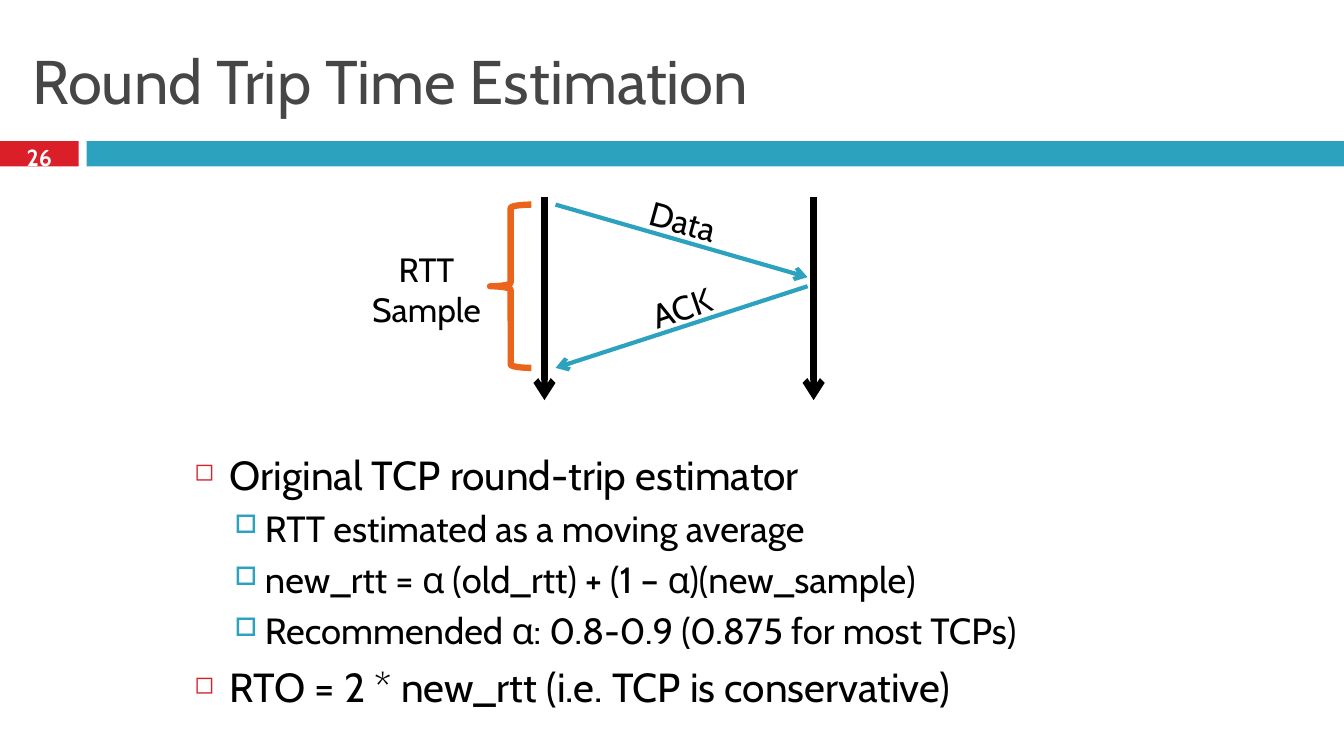
from dataclasses import dataclass

from lxml import etree
from pptx import Presentation
from pptx.dml.color import RGBColor
from pptx.enum.shapes import MSO_CONNECTOR, MSO_SHAPE
from pptx.enum.text import MSO_ANCHOR, PP_ALIGN
from pptx.oxml.ns import qn
from pptx.util import Pt

RECT = MSO_SHAPE.RECTANGLE
BRACE = MSO_SHAPE.LEFT_BRACE
LINE = MSO_CONNECTOR.STRAIGHT
LEFT = PP_ALIGN.LEFT
MID = PP_ALIGN.CENTER
TOP = MSO_ANCHOR.TOP
CORE = MSO_ANCHOR.MIDDLE

SCALE = 9144
FONT = "Cabin"
BLACK = "000000"
WHITE = "FFFFFF"
GREY = "464646"
RED = "DA1F28"
TEAL = "2DA2BF"
AMBER = "EB641B"


@dataclass
class Box:
    x: int
    y: int
    w: int
    h: int


@dataclass
class Label:
    text: str
    box: Box
    size: float = 24
    tint: str = BLACK
    align: int = MID
    anchor: int = TOP
    bold: bool = False
    turn: float = 0


@dataclass
class Arrow:
    x1: int
    y1: int
    x2: int
    y2: int
    tint: str
    width: float


@dataclass
class Level:
    size: int
    margin: int
    hang: int
    gap: float
    mark: str
    tint: str
    ratio: int


HEAD = Level(29, 35, 35, 7, "◻", RED, 60)
SUB = Level(26, 70, 30, 5.5, "□", TEAL, 70)

BARS = [(Box(0, 140, 78, 25), RED), (Box(86, 140, 1247, 25), TEAL)]

LABELS = [
    Label("Round Trip Time Estimation", Box(22, 25, 1289, 108), 44, GREY, LEFT, CORE),
    Label("26", Box(0, 137, 78, 33), 16.6, WHITE, bold=True),
    Label("Data", Box(568, 194, 219, 50), turn=15.6),
    Label("ACK", Box(618, 280, 116, 50), turn=341),
    Label("RTT Sample", Box(349, 242, 148, 91)),
]

ARROWS = [Arrow(x, 195, x, 397, BLACK, 4.5) for x in (540, 807)] + [
    Arrow(551, 203, 801, 275, TEAL, 3),
    Arrow(801, 284, 551, 365, TEAL, 3),
]

POINTS = [
    (HEAD, "Original TCP round-trip estimator"),
    (SUB, "RTT estimated as a moving average"),
    (SUB, "new_rtt = α (old_rtt) + (1 – α)(new_sample)"),
    (SUB, "Recommended α: 0.8-0.9 (0.875 for most TCPs)"),
    (HEAD, "RTO = 2 * new_rtt (i.e. TCP is conservative)"),
]


def px(n: int) -> int:
    return n * SCALE


def place(box: Box) -> tuple[int, int, int, int]:
    return px(box.x), px(box.y), px(box.w), px(box.h)


def color(code: str) -> RGBColor:
    return RGBColor.from_string(code)


def add_run(para, text: str, size: float, tint: str, bold: bool = False) -> None:
    run = para.add_run()
    run.text = text
    run.font.name = FONT
    run.font.size = Pt(size)
    run.font.bold = bold
    run.font.color.rgb = color(tint)


def add_bar(slide, box: Box, tint: str) -> None:
    bar = slide.shapes.add_shape(RECT, *place(box))
    bar.shadow.inherit = False
    bar.fill.solid()
    bar.fill.fore_color.rgb = color(tint)
    bar.line.fill.background()


def add_brace(slide, box: Box) -> None:
    brace = slide.shapes.add_shape(BRACE, *place(box))
    brace.shadow.inherit = False
    brace.fill.background()
    brace.line.color.rgb = color(AMBER)
    brace.line.width = Pt(4.5)


def add_label(slide, label: Label) -> None:
    shape = slide.shapes.add_textbox(*place(label.box))
    shape.rotation = label.turn
    frame = shape.text_frame
    frame.word_wrap = True
    frame.vertical_anchor = label.anchor
    para = frame.paragraphs[0]
    para.alignment = label.align
    add_run(para, label.text, label.size, label.tint, label.bold)


def add_arrow(slide, arrow: Arrow) -> None:
    ends = [px(n) for n in (arrow.x1, arrow.y1, arrow.x2, arrow.y2)]
    link = slide.shapes.add_connector(LINE, *ends)
    link.line.color.rgb = color(arrow.tint)
    link.line.width = Pt(arrow.width)
    props = link._element.spPr
    etree.SubElement(props.find(qn("a:ln")), qn("a:tailEnd"), type="arrow")
    etree.SubElement(props, qn("a:effectLst"))


def add_mark(para, level: Level) -> None:
    props = para._p.get_or_add_pPr()
    props.set("marL", str(px(level.margin)))
    props.set("indent", str(-px(level.hang)))
    tint = etree.SubElement(props, qn("a:buClr"))
    etree.SubElement(tint, qn("a:srgbClr"), val=level.tint)
    etree.SubElement(props, qn("a:buSzPct"), val=str(level.ratio * 1000))
    etree.SubElement(props, qn("a:buChar"), char=level.mark)


def add_points(slide, box: Box) -> None:
    frame = slide.shapes.add_textbox(*place(box)).text_frame
    frame.word_wrap = True
    for i, (level, text) in enumerate(POINTS):
        para = frame.add_paragraph() if i else frame.paragraphs[0]
        para.level = int(level is SUB)
        add_mark(para, level)
        para.space_before = Pt(level.gap if i else 0)
        add_run(para, text, level.size, BLACK)


def main() -> None:
    deck = Presentation()
    deck.slide_width = px(1333)
    deck.slide_height = px(750)
    slide = deck.slides.add_slide(deck.slide_layouts[6])
    for box, tint in BARS:
        add_bar(slide, box, tint)
    add_points(slide, Box(183, 441, 967, 293))
    for arrow in ARROWS:
        add_arrow(slide, arrow)
    add_brace(slide, Box(486, 203, 41, 162))
    for label in LABELS:
        add_label(slide, label)
    deck.save("out.pptx")


if __name__ == "__main__":
    main()
